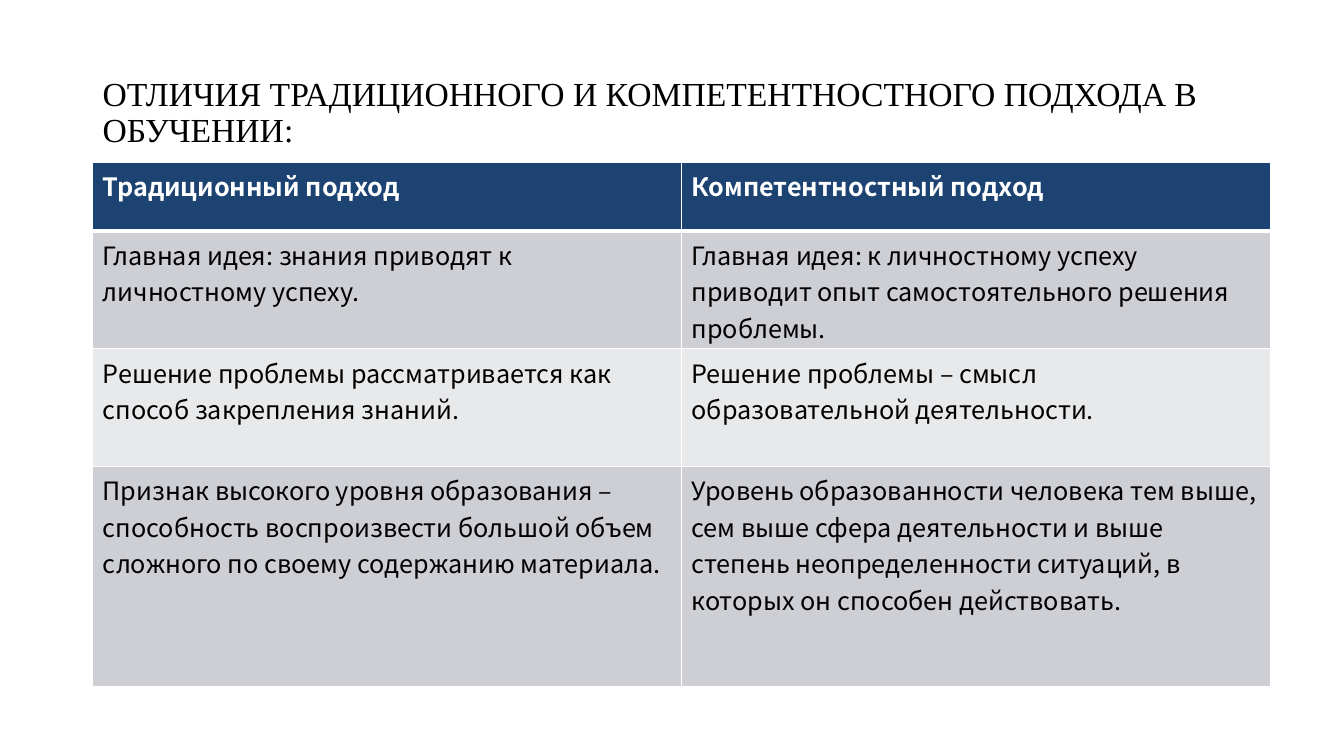
from dataclasses import dataclass

from lxml.etree import SubElement
from pptx import Presentation
from pptx.dml.color import RGBColor
from pptx.enum.text import MSO_ANCHOR
from pptx.oxml.ns import qn
from pptx.util import Inches, Pt


@dataclass(frozen=True)
class Theme:
    title_font: str = "Times New Roman"
    body_font: str = "Noto Sans CJK SC"
    title_size: int = 24
    body_size: int = 18
    text: str = "000000"
    header_text: str = "FFFFFF"
    header_fill: str = "1C4372"
    band_fills: tuple = ("CDCFD5", "E8E9EB")
    border: str = "FFFFFF"
    thin: int = 1
    thick: int = 3


TITLE = "ОТЛИЧИЯ ТРАДИЦИОННОГО И КОМПЕТЕНТНОСТНОГО ПОДХОДА В ОБУЧЕНИИ:"
APPROACHES = [
    ("Традиционный подход", "Компетентностный подход"),
    ("Главная идея: знания приводят к личностному успеху.",
     "Главная идея: к личностному успеху приводит опыт самостоятельного "
     "решения проблемы."),
    ("Решение проблемы рассматривается как способ закрепления знаний.",
     "Решение проблемы – смысл образовательной деятельности."),
    ("Признак высокого уровня образования – способность воспроизвести "
     "большой объем сложного по своему содержанию материала.",
     "Уровень образованности человека тем выше, сем выше сфера деятельности "
     "и выше степень неопределенности ситуаций, в которых он способен "
     "действовать."),
]
COL_WIDTH = 5.84
ROW_HEIGHTS = [0.68, 1.17, 1.17, 2.18]


def write(tf, text, *, font, size, color, bold=False, spacing=None):
    p = tf.paragraphs[0]
    p.line_spacing = spacing
    r = p.add_run()
    r.text = text
    r.font.name = font
    r.font.size = Pt(size)
    r.font.bold = bold
    r.font.color.rgb = RGBColor.from_string(color)


def add_border(cell, side, color, width):
    """Draw one cell edge (L, R, T or B); call before setting the fill."""
    tc_pr = cell._tc.get_or_add_tcPr()
    ln = SubElement(tc_pr, qn(f"a:ln{side}"), w=str(Pt(width)))
    fill = SubElement(ln, qn("a:solidFill"))
    SubElement(fill, qn("a:srgbClr"), val=color)


class SlideBuilder:
    def __init__(self, slide, theme):
        self.slide = slide
        self.theme = theme

    def title(self, text, left, top, width, height):
        t = self.theme
        sp = self.slide.shapes.add_textbox(
            Inches(left), Inches(top), Inches(width), Inches(height))
        tf = sp.text_frame
        tf.word_wrap = True
        tf.vertical_anchor = MSO_ANCHOR.MIDDLE
        write(tf, text, font=t.title_font, size=t.title_size,
              color=t.text, spacing=0.9)

    def table(self, rows, left, top, col_width, row_heights):
        n_cols = len(rows[0])
        table = self.slide.shapes.add_table(
            len(rows), n_cols, Inches(left), Inches(top),
            Inches(col_width * n_cols), Inches(sum(row_heights))).table
        for col in table.columns:
            col.width = Inches(col_width)
        for i, (texts, height) in enumerate(zip(rows, row_heights)):
            table.rows[i].height = Inches(height)
            for j, text in enumerate(texts):
                self.cell(table.cell(i, j), text, i)

    def cell(self, cell, text, row):
        t = self.theme
        header = row == 0
        for side in "LRTB":
            under_header = (row, side) in ((0, "B"), (1, "T"))
            add_border(cell, side, t.border, t.thick if under_header else t.thin)
        fill = t.header_fill if header else t.band_fills[(row - 1) % 2]
        cell.fill.solid()
        cell.fill.fore_color.rgb = RGBColor.from_string(fill)
        write(cell.text_frame, text, font=t.body_font, size=t.body_size,
              color=t.header_text if header else t.text, bold=header)


def main():
    prs = Presentation()
    prs.slide_width, prs.slide_height = Inches(13.33), Inches(7.5)
    s = SlideBuilder(prs.slides.add_slide(prs.slide_layouts[6]), Theme())
    s.title(TITLE, 0.92, 0.4, 11.5, 1.45)
    s.table(APPROACHES, 0.92, 1.61, COL_WIDTH, ROW_HEIGHTS)
    prs.save("out.pptx")


if __name__ == "__main__":
    main()
